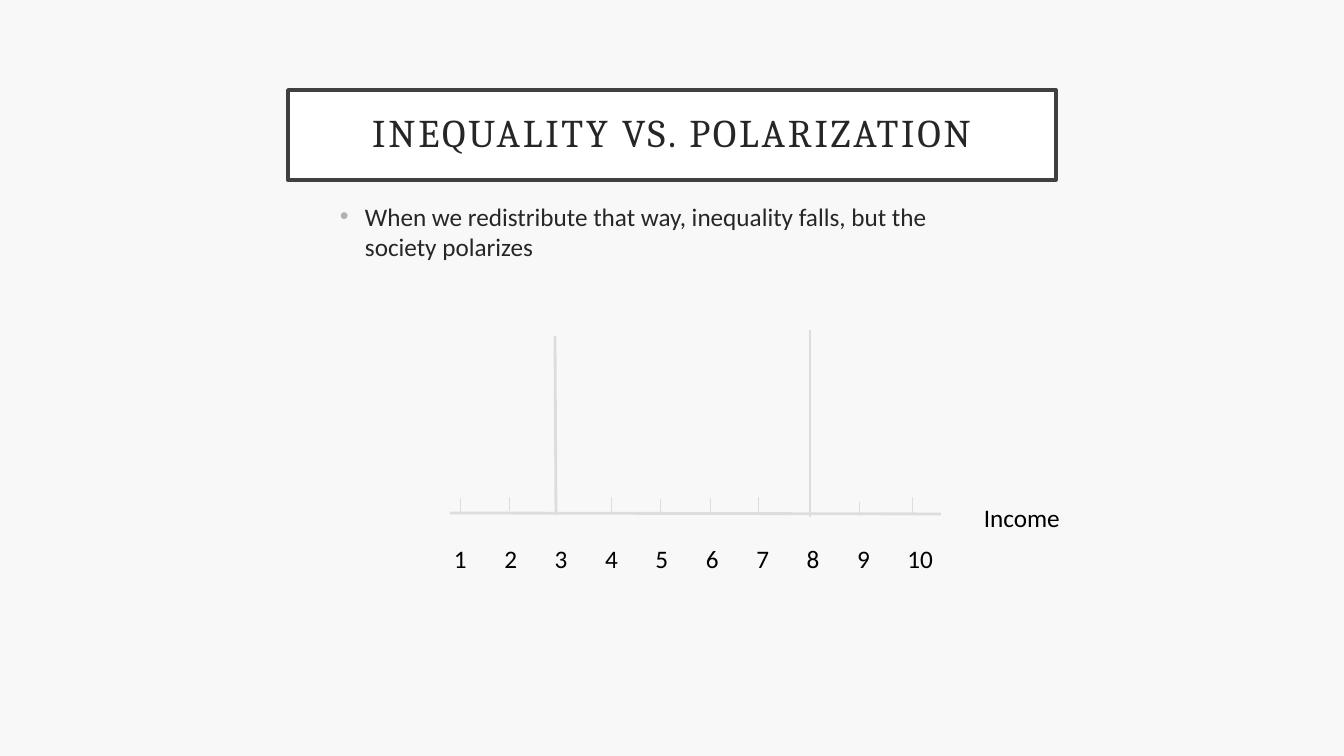
from dataclasses import dataclass

from lxml.etree import SubElement
from pptx import Presentation
from pptx.dml.color import RGBColor
from pptx.enum.shapes import MSO_CONNECTOR, MSO_SHAPE
from pptx.enum.text import MSO_ANCHOR, MSO_AUTO_SIZE, PP_ALIGN
from pptx.oxml.ns import qn
from pptx.util import Pt

EMU_PER_PX = 914400 / 100.8


def px(length):
    return round(length * EMU_PER_PX)


@dataclass(frozen=True)
class Theme:
    background: str = "F8F8F8"
    panel: str = "FFFFFF"
    border: str = "404040"
    ink: str = "262626"
    label: str = "000000"
    bullet: str = "B2B2B2"
    rule: str = "DDDDDD"
    heading_font: str = "Cambria"
    body_font: str = "Calibri"
    heading_size: float = 28
    body_size: float = 18
    border_width: float = 2.5
    thick: float = 2
    thin: float = 0.5


class SlideBuilder:
    def __init__(self, deck, theme):
        self.theme = theme
        self.page = deck.slides.add_slide(deck.slide_layouts[6])
        fill = self.page.background.fill
        fill.solid()
        fill.fore_color.rgb = RGBColor.from_string(theme.background)

    def span(self, para, text, font, size, color):
        span = para.add_run()
        span.text = text
        span.font.name = font
        span.font.size = Pt(size)
        span.font.color.rgb = RGBColor.from_string(color)
        return span

    def title(self, text, left, top, width, height):
        theme = self.theme
        box = self.page.shapes.add_shape(
            MSO_SHAPE.RECTANGLE, px(left), px(top), px(width), px(height))
        box.shadow.inherit = False
        box.fill.solid()
        box.fill.fore_color.rgb = RGBColor.from_string(theme.panel)
        box.line.color.rgb = RGBColor.from_string(theme.border)
        box.line.width = Pt(theme.border_width)
        frame = box.text_frame
        frame.word_wrap = True
        frame.vertical_anchor = MSO_ANCHOR.MIDDLE
        frame.margin_left = frame.margin_right = px(20)
        frame.margin_top = frame.margin_bottom = px(20)
        para = frame.paragraphs[0]
        para.alignment = PP_ALIGN.CENTER
        para.line_spacing = 0.9
        span = self.span(para, text, theme.heading_font, theme.heading_size, theme.ink)
        span.font._element.set("spc", "200")

    def text(self, text, left, top, width, height, color, wrap=True, grow=True):
        box = self.page.shapes.add_textbox(px(left), px(top), px(width), px(height))
        frame = box.text_frame
        frame.word_wrap = wrap
        frame.auto_size = MSO_AUTO_SIZE.SHAPE_TO_FIT_TEXT if grow else MSO_AUTO_SIZE.NONE
        para = frame.paragraphs[0]
        self.span(para, text, self.theme.body_font, self.theme.body_size, color)
        return para

    def bullet(self, text, left, top, width, height):
        para = self.text(text, left, top, width, height, self.theme.ink, grow=False)
        para.space_before = Pt(10)
        properties = para._p.get_or_add_pPr()
        properties.set("marL", str(px(25)))
        properties.set("indent", str(-px(25)))
        color = SubElement(properties, qn("a:buClr"))
        SubElement(color, qn("a:srgbClr"), val=self.theme.bullet)
        SubElement(properties, qn("a:buFont"), typeface="Arial")
        SubElement(properties, qn("a:buChar"), char="•")

    def scale_labels(self, labels, left, top, width, height, step):
        para = self.text("\t".join(labels), left, top, width, height, self.theme.label)
        stops = SubElement(para._p.get_or_add_pPr(), qn("a:tabLst"))
        for index in range(1, len(labels)):
            SubElement(stops, qn("a:tab"), pos=str(round(index * step * EMU_PER_PX)), algn="l")

    def line(self, start, end, width):
        line = self.page.shapes.add_connector(
            MSO_CONNECTOR.STRAIGHT, *map(px, start), *map(px, end))
        line.line.color.rgb = RGBColor.from_string(self.theme.rule)
        line.line.width = Pt(width)
        SubElement(line._element.spPr, qn("a:effectLst"))


def main():
    deck = Presentation()
    deck.slide_width, deck.slide_height = px(1344), px(756)
    theme = Theme()
    slide = SlideBuilder(deck, theme)

    slide.title("INEQUALITY VS. POLARIZATION", 288, 90, 768, 90)
    slide.bullet(
        "When we redistribute that way, inequality falls, but the society polarizes",
        330, 196, 683, 435)

    slide.line((450, 513), (941, 514), theme.thick)
    income_peaks = [((556, 515), (555, 336)), ((810, 517), (810, 330))]
    for foot, tip in income_peaks:
        slide.line(foot, tip, theme.thick)

    ticks = [(460, 514, 498), (509, 511, 497), (611, 513, 497), (660, 515, 499),
             (710, 514, 498), (758, 512, 497), (859, 516, 502), (912, 513, 497)]
    for x, bottom, top in ticks:
        slide.line((x, bottom), (x, top), theme.thin)

    slide.text("Income", 974, 497, 100, 40, theme.label, wrap=False)
    slide.scale_labels([str(income) for income in range(1, 11)], 444, 538, 504, 40, 50.4)

    deck.save("out.pptx")


if __name__ == "__main__":
    main()
